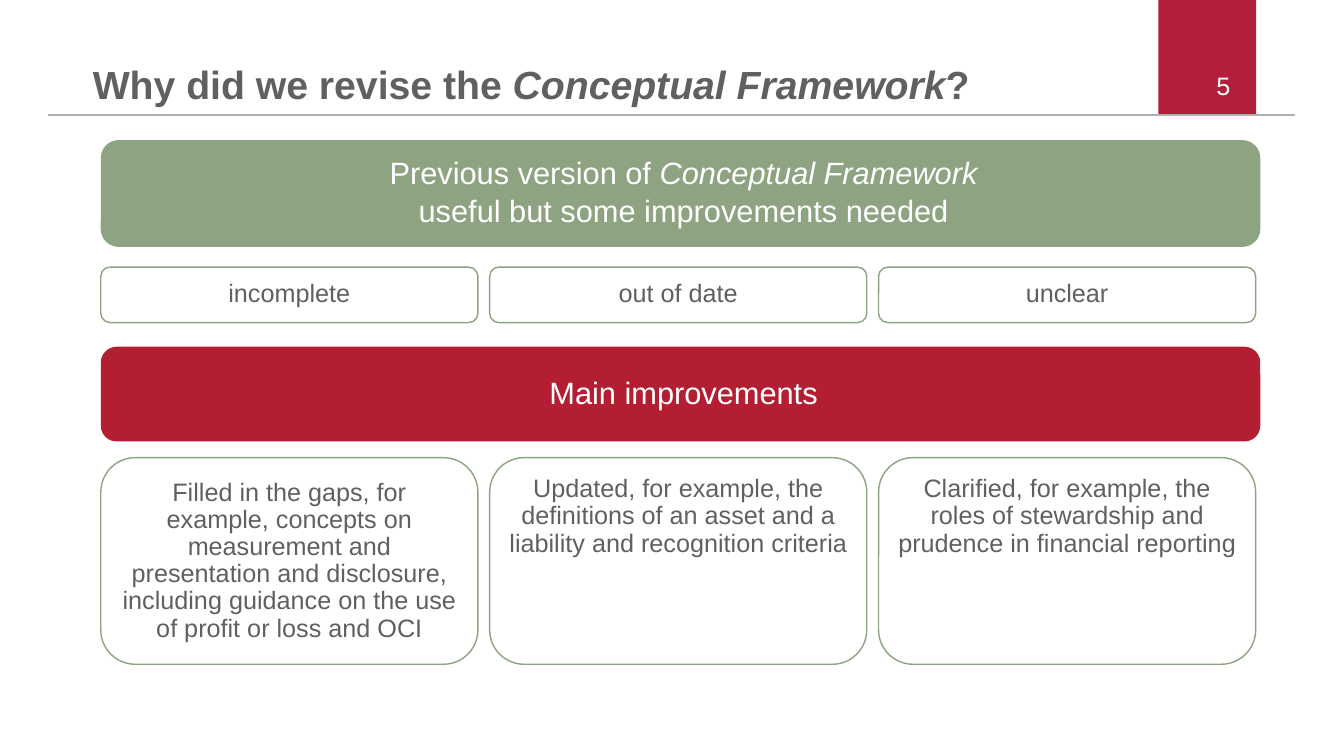
from lxml import etree
from pptx import Presentation
from pptx.dml.color import RGBColor
from pptx.enum.shapes import MSO_CONNECTOR, MSO_SHAPE
from pptx.enum.text import MSO_ANCHOR, PP_ALIGN
from pptx.oxml.ns import qn
from pptx.util import Inches, Pt

LEFT, CENTER, RIGHT = PP_ALIGN.LEFT, PP_ALIGN.CENTER, PP_ALIGN.RIGHT
TOP, MIDDLE, BOTTOM = MSO_ANCHOR.TOP, MSO_ANCHOR.MIDDLE, MSO_ANCHOR.BOTTOM
RECT, ROUNDED = MSO_SHAPE.RECTANGLE, MSO_SHAPE.ROUNDED_RECTANGLE

WHITE = RGBColor(0xFF, 0xFF, 0xFF)
GRAY = RGBColor(0x5F, 0x60, 0x62)
RULE_GRAY = RGBColor(0xAF, 0xAF, 0xB0)
GREEN = RGBColor(0x8D, 0xA3, 0x81)
RED = RGBColor(0xB3, 0x1E, 0x32)
TAB_RED = RGBColor(0xB3, 0x1E, 0x3B)

# A paragraph is a list of (text, italic) runs.
TITLE = [("Why did we revise the ", False), ("Conceptual Framework", True), ("?", False)]
PAGE_NUMBER = "5"
# Bands: top, height, fill, paragraphs
BANDS = [
    (1.39, 1.06, GREEN, [
        [("Previous version of ", False), ("Conceptual Framework", True)],
        [("useful but some improvements needed", False)],
    ]),
    (3.44, 0.94, RED, [[("Main improvements", False)]]),
]
# Card rows: top, height, (text, anchor) for each column
CARD_ROWS = [
    (2.65, 0.55, [("incomplete", MIDDLE), ("out of date", MIDDLE), ("unclear", MIDDLE)]),
    (4.54, 2.05, [
        ("Filled in the gaps, for example, concepts on measurement and presentation "
         "and disclosure, including guidance on the use of profit or loss and OCI", MIDDLE),
        ("Updated, for example, the definitions of an asset and a liability "
         "and recognition criteria", TOP),
        ("Clarified, for example, the roles of stewardship and prudence "
         "in financial reporting", TOP),
    ]),
]
GRID_LEFT, BAND_WIDTH = 1, 11.5
CARD_WIDTH, CARD_PITCH = 3.74, 3.857


def write(frame, paragraphs, size, color, align, anchor, insets, bold=False):
    frame.word_wrap = True
    frame.vertical_anchor = anchor
    (frame.margin_left, frame.margin_top,
     frame.margin_right, frame.margin_bottom) = map(Inches, insets)
    for index, runs in enumerate(paragraphs):
        paragraph = frame.add_paragraph() if index else frame.paragraphs[0]
        paragraph.alignment = align
        paragraph.line_spacing = 0.9
        if index < len(paragraphs) - 1:
            paragraph.space_after = Pt(4)
        font = paragraph.font
        font.name, font.size, font.bold = "Arial", Pt(size), bold
        font.color.rgb = color
        for text, italic in runs:
            run = paragraph.add_run()
            run.text = text
            if italic:
                run.font.italic = True


def add_panel(slide, preset, box, fill=None, outline=None):
    panel = slide.shapes.add_shape(preset, *map(Inches, box))
    panel.shadow.inherit = False
    if fill is None:
        panel.fill.background()
    else:
        panel.fill.solid()
        panel.fill.fore_color.rgb = fill
    if outline is None:
        panel.line.fill.background()
    else:
        panel.line.color.rgb = outline
        panel.line.width = Pt(1)
    return panel


def add_header(slide):
    add_panel(slide, RECT, (11.49, 0, 0.97, 1.14), TAB_RED)
    rule = slide.shapes.add_connector(
        MSO_CONNECTOR.STRAIGHT, *map(Inches, (0.48, 1.14, 12.84, 1.14)))
    rule.line.color.rgb = RULE_GRAY
    rule.line.width = Pt(1.2)
    etree.SubElement(rule._element.spPr, qn("a:effectLst"))

    number = slide.shapes.add_textbox(*map(Inches, (9.19, 0.67, 3.11, 0.4)))
    write(number.text_frame, [[(PAGE_NUMBER, False)]], 18, WHITE, RIGHT, MIDDLE,
          (0.1, 0.05, 0.1, 0.05))
    title = slide.shapes.title
    title.left, title.top, title.width, title.height = map(Inches, (0.92, 0, 9.76, 1.07))
    write(title.text_frame, [TITLE], 28, GRAY, LEFT, BOTTOM, (0, 0, 0, 0), bold=True)


def main():
    deck = Presentation()
    deck.slide_width, deck.slide_height = Inches(13.33), Inches(7.5)
    slide = deck.slides.add_slide(deck.slide_layouts[5])
    add_header(slide)
    for top, height, fill, paragraphs in BANDS:
        band = add_panel(slide, ROUNDED, (GRID_LEFT, top, BAND_WIDTH, height), fill)
        write(band.text_frame, paragraphs, 22, WHITE, CENTER, MIDDLE, (0.16, 0.1, 0.1, 0.1))
    for top, height, cards in CARD_ROWS:
        for column, (text, anchor) in enumerate(cards):
            left = GRID_LEFT + column * CARD_PITCH
            card = add_panel(slide, ROUNDED, (left, top, CARD_WIDTH, height), outline=GREEN)
            write(card.text_frame, [[(text, False)]], 18, GRAY, CENTER, anchor, (0.08,) * 4)
    deck.save("out.pptx")


if __name__ == "__main__":
    main()
